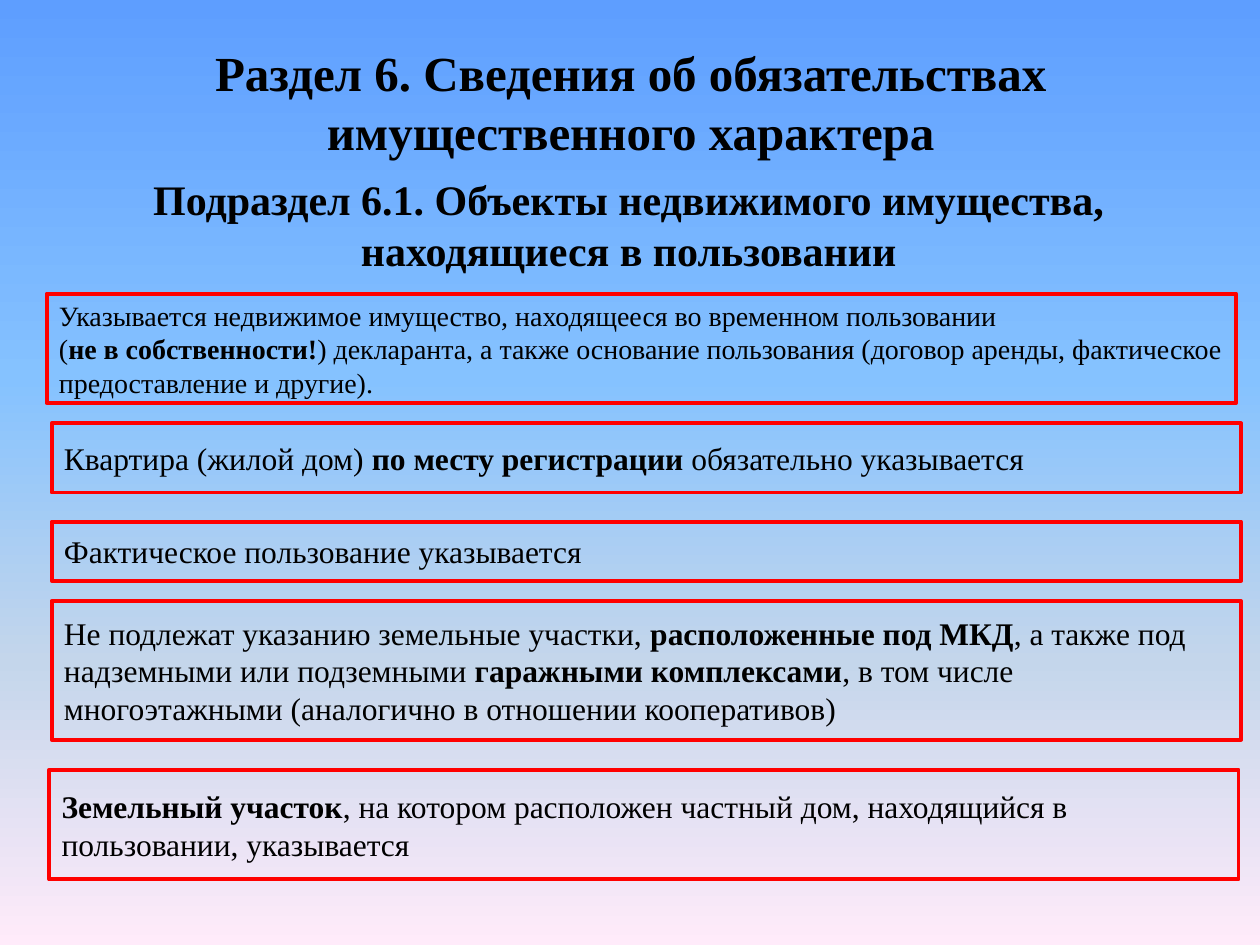
from lxml.etree import SubElement
from pptx import Presentation
from pptx.dml.color import RGBColor
from pptx.enum.shapes import MSO_SHAPE
from pptx.enum.text import MSO_ANCHOR, PP_ALIGN
from pptx.oxml.ns import qn
from pptx.util import Inches, Pt

FONT = "Times New Roman"
BLACK = RGBColor(0, 0, 0)
RED = RGBColor(0xFF, 0, 0)
SKY = [
    (0, RGBColor(0x5E, 0x9E, 0xFF)),
    (40, RGBColor(0x85, 0xC2, 0xFF)),
    (70, RGBColor(0xC4, 0xD6, 0xEB)),
    (100, RGBColor(0xFF, 0xEB, 0xFA)),
]

deck = Presentation()
deck.slide_width, deck.slide_height = Inches(10), Inches(7.5)
slide = deck.slides.add_slide(deck.slide_layouts[6])


def place(left, top, width, height):
    """Turn percentages of the slide into a position and a size."""
    wide, high = deck.slide_width / 100, deck.slide_height / 100
    return [round(n) for n in (left * wide, top * high, width * wide, height * high)]


def write(frame, lines, size, align, bold=False):
    """Fill a frame; text between asterisks is bold."""
    frame.word_wrap = True
    for i, line in enumerate(lines):
        para = frame.paragraphs[0] if i == 0 else frame.add_paragraph()
        para.alignment = align
        font = para.font
        font.name, font.size, font.bold = FONT, Pt(size), bold
        font.color.rgb = BLACK
        for j, part in enumerate(line.split("*")):
            if part:
                run = para.add_run()
                run.text = part
                if j % 2:
                    run.font.bold = True


# Background
fill = slide.background.fill
fill.gradient()
fill.gradient_angle = 270
stops = next(slide.element.iter(qn("a:gsLst")))
for old in list(stops):
    stops.remove(old)
for share, color in SKY:
    stop = SubElement(stops, qn("a:gs"), pos=str(share * 1000))
    SubElement(stop, qn("a:srgbClr"), val=str(color))

# Headings: left, top, width, height, size, text
heads = [
    (2.8, 3.87, 94.5, 13.87, 28,
     "Раздел 6. Сведения об обязательствах имущественного характера"),
    (4.1, 17.73, 91.6, 12.13, 24,
     "Подраздел 6.1. Объекты недвижимого имущества, находящиеся в пользовании"),
]
for *area, size, text in heads:
    box = slide.shapes.add_textbox(*place(*area))
    write(box.text_frame, [text], size, PP_ALIGN.CENTER, bold=True)

# Framed rules: left, top, height, size, lines
rules = [
    (3.7, 31.07, 11.6, 16,
     ["Указывается недвижимое имущество, находящееся во временном пользовании",
      "(*не в собственности!*) декларанта, а также основание пользования "
      "(договор аренды, фактическое предоставление и другие)."]),
    (4.1, 44.8, 7.33, 18,
     ["Квартира (жилой дом) *по месту регистрации *обязательно указывается"]),
    (4.1, 55.2, 6.27, 18, ["Фактическое пользование указывается"]),
    (4.1, 63.6, 14.67, 18,
     ["Не подлежат указанию земельные участки, *расположенные под МКД*, "
      "а также под надземными или подземными *гаражными комплексами*, в том числе "
      "многоэтажными (аналогично в отношении кооперативов)"]),
    (3.9, 81.47, 11.6, 18,
     ["*Земельный участок*, на котором расположен частный дом, "
      "находящийся в пользовании, указывается"]),
]
for left, top, height, size, lines in rules:
    box = slide.shapes.add_shape(MSO_SHAPE.RECTANGLE, *place(left, top, 94.4, height))
    box.shadow.inherit = False
    box.fill.background()
    box.line.color.rgb = RED
    box.line.width = Pt(2.25)
    box.text_frame.vertical_anchor = MSO_ANCHOR.MIDDLE
    write(box.text_frame, lines, size, PP_ALIGN.LEFT)

deck.save("out.pptx")
